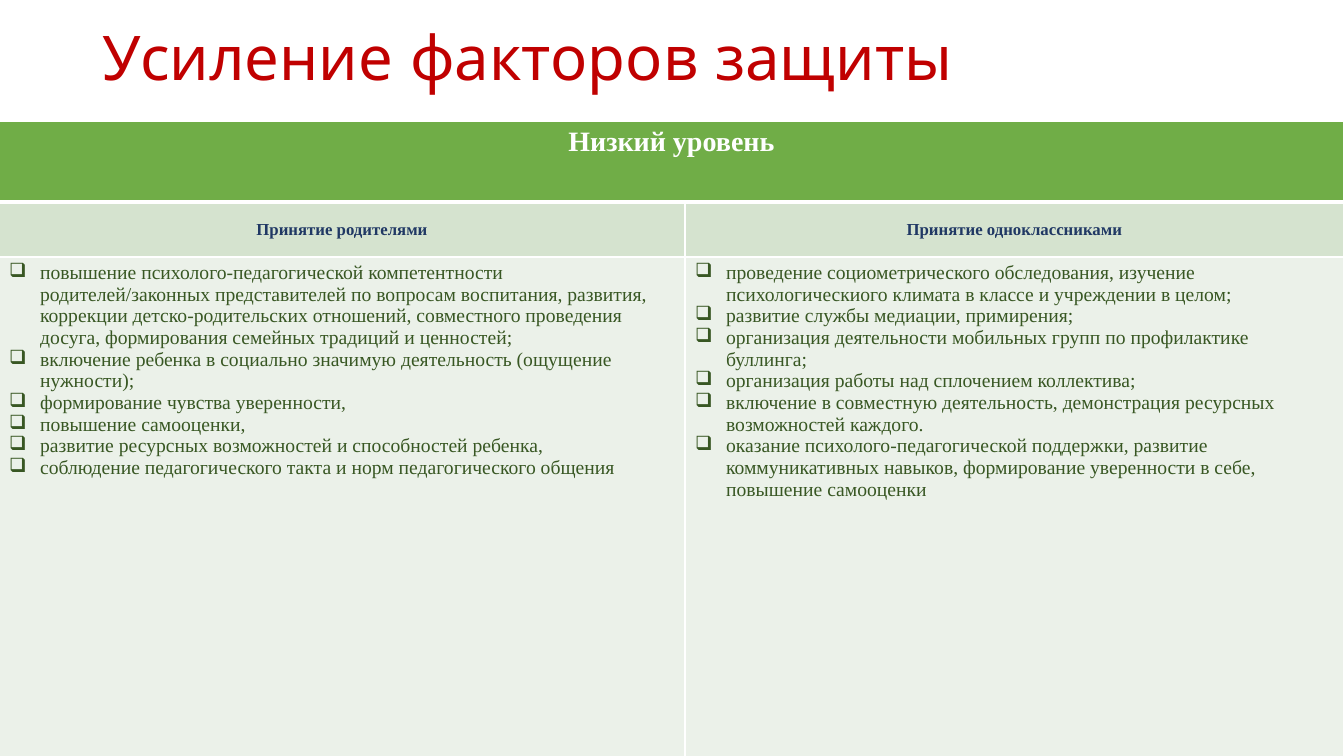
from lxml import etree
from pptx import Presentation, util as u
from pptx.dml.color import RGBColor
from pptx.enum import text
from pptx.oxml.ns import qn

PX = 914400 / 100.8
WHITE = RGBColor(0xFF, 0xFF, 0xFF)
RED = RGBColor(0xC0, 0x00, 0x00)
NAVY = RGBColor(0x20, 0x38, 0x64)
DARK_GREEN = RGBColor(0x38, 0x57, 0x23)
GREEN = RGBColor(0x70, 0xAD, 0x47)
LIGHT_GREEN = RGBColor(0xD5, 0xE3, 0xCF)
PALE_GREEN = RGBColor(0xEB, 0xF1, 0xE9)

LEVEL = "Низкий уровень"
MEASURES = {
    "Принятие родителями": [
        "повышение психолого-педагогической компетентности родителей/законных представителей "
        "по вопросам воспитания, развития, коррекции детско-родительских отношений, совместного "
        "проведения досуга, формирования семейных традиций и ценностей;",
        "включение ребенка в социально значимую деятельность (ощущение нужности);",
        "формирование чувства уверенности,",
        "повышение самооценки,",
        "развитие ресурсных возможностей и способностей ребенка,",
        "соблюдение педагогического такта и норм педагогического общения",
    ],
    "Принятие одноклассниками": [
        "проведение социометрического обследования, изучение психологическиого климата "
        "в классе и учреждении в целом;",
        "развитие службы медиации, примирения;",
        "организация деятельности мобильных групп по профилактике буллинга;",
        "организация работы над сплочением коллектива;",
        "включение в совместную деятельность, демонстрация ресурсных возможностей каждого.",
        "оказание психолого-педагогической поддержки, развитие коммуникативных навыков, "
        "формирование уверенности в себе, повышение самооценки",
    ],
}


def px(n):
    return u.Emu(round(n * PX))


def style(paragraph, name, size, color, bold=False):
    font = paragraph.font
    font.name, font.size, font.bold = name, u.Pt(size), bold
    font.color.rgb = color


prs = Presentation()
prs.slide_width, prs.slide_height = px(1344), px(756)
slide = prs.slides.add_slide(prs.slide_layouts[6])

# Title
title = slide.shapes.add_textbox(px(93), px(0), px(1159), px(121)).text_frame
title.word_wrap = True
title.vertical_anchor = text.MSO_ANCHOR.MIDDLE
heading = title.paragraphs[0]
heading.text = "Усиление факторов защиты"
heading.line_spacing = 0.9
style(heading, "Quicksand", 44, RED)

# Table grid
row_heights = [81, 55, 534]
column_widths = [686, 659]
table = slide.shapes.add_table(3, 2, px(-1), px(121), px(sum(column_widths)),
                               px(sum(row_heights))).table
table.first_row = table.horz_banding = False
for row, height in zip(table.rows, row_heights):
    row.height = px(height)
for column, width in zip(table.columns, column_widths):
    column.width = px(width)

# White borders, thicker under the level row, and fills by row
for r, fill in enumerate([GREEN, LIGHT_GREEN, PALE_GREEN]):
    for c in range(2):
        cell = table.cell(r, c)
        props = cell._tc.get_or_add_tcPr()
        for side in "LRTB":
            points = 3 if (r, side) in [(0, "B"), (1, "T")] else 1
            line = etree.SubElement(props, qn("a:ln" + side), w=str(u.Pt(points)))
            solid = etree.SubElement(line, qn("a:solidFill"))
            etree.SubElement(solid, qn("a:srgbClr"), val=str(WHITE))
        cell.fill.solid()
        cell.fill.fore_color.rgb = fill

# Level row
level = table.cell(0, 0)
level.merge(table.cell(0, 1))
level.text = LEVEL
level_line = level.text_frame.paragraphs[0]
level_line.alignment = text.PP_ALIGN.CENTER
style(level_line, "Times New Roman", 20, WHITE, True)

# Group headings and their bulleted measures
for c, (group, measures) in enumerate(MEASURES.items()):
    group_cell = table.cell(1, c)
    group_cell.text = group
    group_cell.vertical_anchor = text.MSO_ANCHOR.MIDDLE
    group_line = group_cell.text_frame.paragraphs[0]
    group_line.alignment = text.PP_ALIGN.CENTER
    style(group_line, "Times New Roman", 12, NAVY, True)

    measures_cell = table.cell(2, c)
    measures_cell.text = "\n".join(measures)
    for measure in measures_cell.text_frame.paragraphs:
        props = measure._p.get_or_add_pPr()
        props.set("marL", str(px(31)))
        props.set("indent", str(px(-31)))
        etree.SubElement(props, qn("a:buChar"), char="❑")
        style(measure, "Times New Roman", 14, DARK_GREEN)

prs.save("out.pptx")
